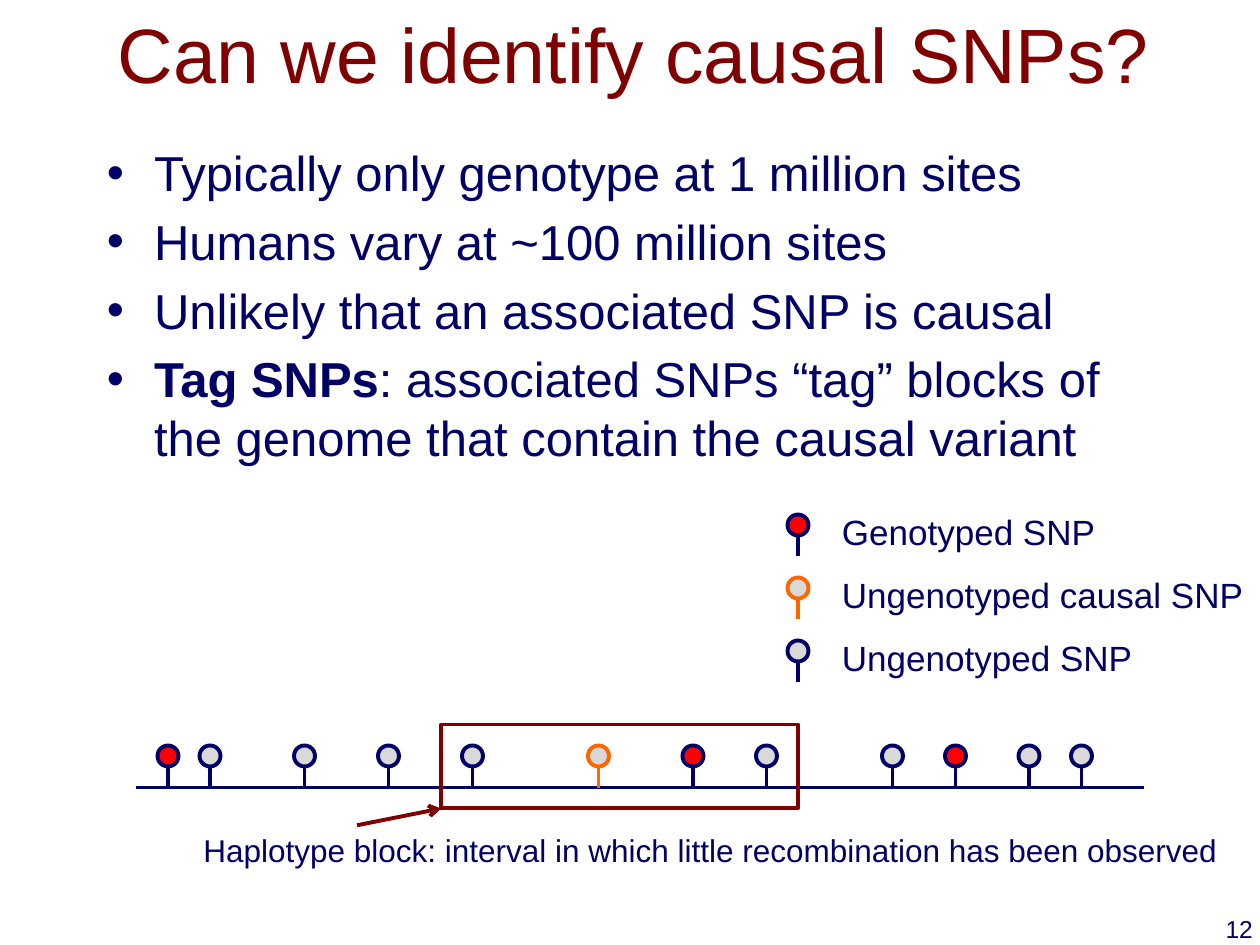
"""Build the slide on tag SNPs and haplotype blocks."""
from lxml.etree import SubElement
from pptx import Presentation
from pptx.dml.color import RGBColor
from pptx.enum.shapes import MSO_CONNECTOR, MSO_SHAPE
from pptx.enum.text import MSO_ANCHOR, PP_ALIGN
from pptx.oxml.ns import qn
from pptx.util import Pt

PX = 7620
NAVY = RGBColor(0x00, 0x00, 0x66)
MAROON = RGBColor(0x80, 0x00, 0x00)
RED = RGBColor(0xFF, 0x00, 0x00)
GREY = RGBColor(0xD9, 0xD9, 0xD9)
ORANGE = RGBColor(0xFF, 0x66, 0x00)

GENOTYPED = (RED, NAVY)
CAUSAL = (GREY, ORANGE)
UNGENOTYPED = (GREY, NAVY)

deck = Presentation()
deck.slide_width, deck.slide_height = 1200 * PX, 900 * PX
page = deck.slides.add_slide(deck.slide_layouts[6])


def add_text(left, top, width, height, paragraphs, size, color=NAVY,
             align=PP_ALIGN.LEFT, wrap=True):
    box = page.shapes.add_textbox(left * PX, top * PX, width * PX, height * PX)
    frame = box.text_frame
    frame.word_wrap = wrap
    for index, spans in enumerate(paragraphs):
        para = frame.paragraphs[0] if index == 0 else frame.add_paragraph()
        para.alignment = align
        for text, bold in spans:
            span = para.add_run()
            span.text = text
            span.font.name = "Arial"
            span.font.size = Pt(size)
            span.font.bold = bold
            span.font.color.rgb = color
    return frame


def add_line(x1, y1, x2, y2, color):
    line = page.shapes.add_connector(
        MSO_CONNECTOR.STRAIGHT, x1 * PX, y1 * PX, x2 * PX, y2 * PX)
    line.line.color.rgb = color
    line.line.width = Pt(2.25)
    SubElement(line._element.spPr, qn("a:effectLst"))
    return line


title = add_text(94, 5, 1020, 90, [[("Can we identify causal SNPs?", False)]],
                 44, MAROON, PP_ALIGN.CENTER)
title.vertical_anchor = MSO_ANCHOR.MIDDLE

body = add_text(90, 130, 1020, 390, [
    [("Typically only genotype at 1 million sites", False)],
    [("Humans vary at ~100 million sites", False)],
    [("Unlikely that an associated SNP is causal", False)],
    [("Tag SNPs", True),
     (": associated SNPs “tag” blocks of the genome that contain the causal variant", False)],
], 28)
for para in body.paragraphs:
    para.space_before = Pt(5.6)
    properties = para._p.get_or_add_pPr()
    properties.set("marL", str(45 * PX))
    properties.set("indent", str(-45 * PX))
    SubElement(properties, qn("a:buFont"), typeface="Arial")
    SubElement(properties, qn("a:buChar"), char="•")

add_line(130, 750, 1090, 750, NAVY)

pins = [(x, 710, GENOTYPED) for x in (160, 660, 910)]
pins += [(x, 710, UNGENOTYPED) for x in (200, 290, 370, 450, 730, 850, 980, 1030)]
pins.append((570, 710, CAUSAL))

legend = [("Genotyped SNP", 268, GENOTYPED),
          ("Ungenotyped causal SNP", 410, CAUSAL),
          ("Ungenotyped SNP", 304, UNGENOTYPED)]
for row, (label, width, style) in enumerate(legend):
    pins.append((760, 490 + 60 * row, style))
    add_text(790, 480 + 60 * row, width, 53, [[(label, False)]], 20, wrap=False)

for x, top, (fill, outline) in pins:
    add_line(x, top + 40, x, top + 20, outline)
    head = page.shapes.add_shape(
        MSO_SHAPE.OVAL, (x - 10) * PX, top * PX, 20 * PX, 20 * PX)
    head.shadow.inherit = False
    head.fill.solid()
    head.fill.fore_color.rgb = fill
    head.line.color.rgb = outline
    head.line.width = Pt(2.25)

block = page.shapes.add_shape(
    MSO_SHAPE.RECTANGLE, 420 * PX, 690 * PX, 340 * PX, 80 * PX)
block.shadow.inherit = False
block.fill.background()
block.line.color.rgb = MAROON
block.line.width = Pt(2.25)

add_text(182, 786, 994, 48, [[(
    "Haplotype block: interval in which little recombination has been observed", False)]],
    18, wrap=False)
arrow = add_line(340, 786, 420, 770, MAROON)
SubElement(arrow.line._get_or_add_ln(), qn("a:tailEnd"), type="arrow")

add_text(955, 865, 250, 60, [[("12", False)]], 14, align=PP_ALIGN.RIGHT)

deck.save("out.pptx")
